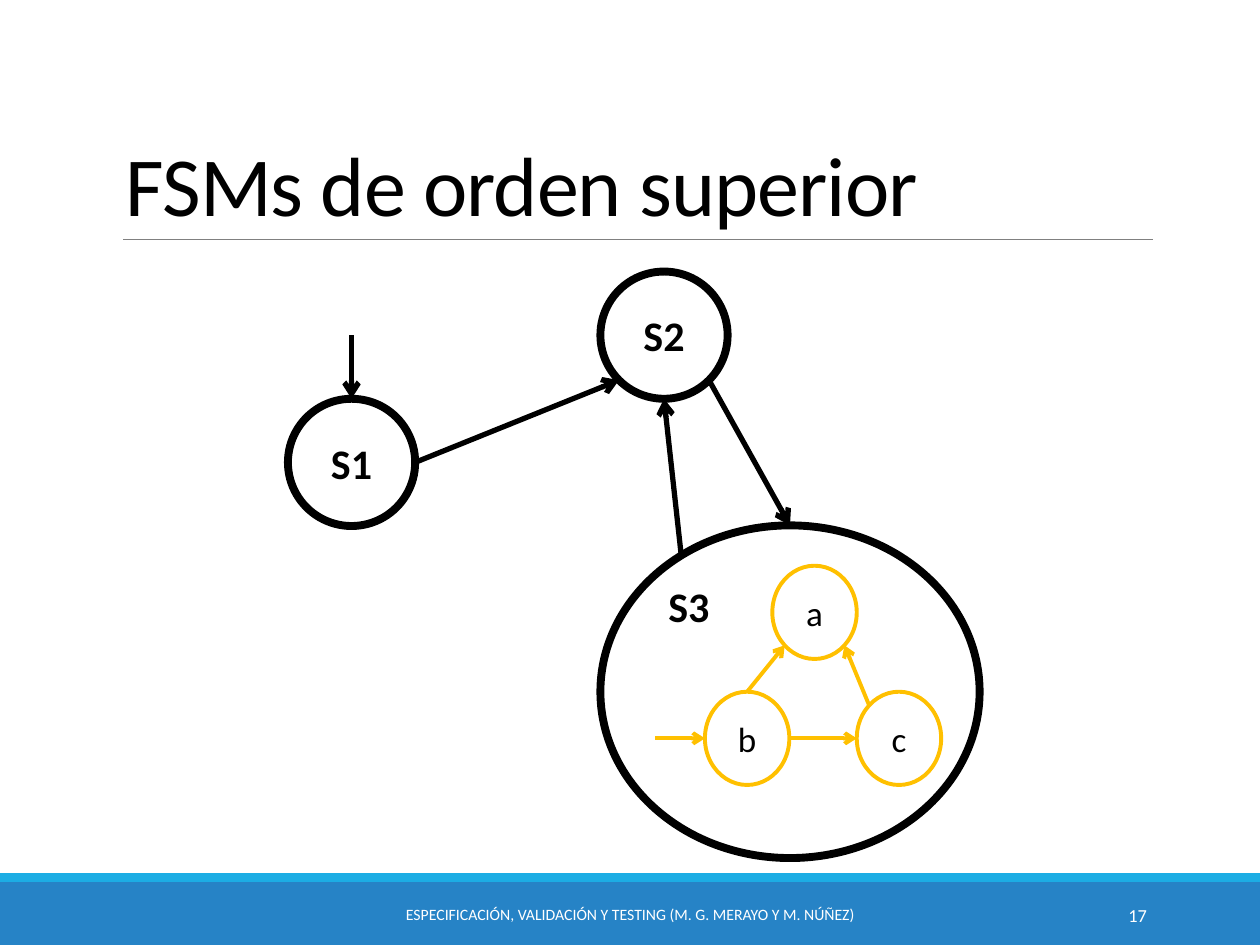
from dataclasses import dataclass
from math import cos, radians, sin

from lxml import etree
from pptx import Presentation
from pptx.dml.color import RGBColor
from pptx.enum.shapes import MSO_CONNECTOR, MSO_SHAPE
from pptx.enum.text import MSO_ANCHOR, PP_ALIGN
from pptx.oxml.ns import qn
from pptx.util import Inches, Pt

BLACK = RGBColor(0x00, 0x00, 0x00)
WHITE = RGBColor(0xFF, 0xFF, 0xFF)
GOLD = RGBColor(0xFF, 0xC0, 0x00)
GREY = RGBColor(0x80, 0x80, 0x80)
BLUE = RGBColor(0x26, 0x83, 0xC6)
CYAN = RGBColor(0x1C, 0xAD, 0xE4)
LEFT, CENTER, RIGHT = PP_ALIGN.LEFT, PP_ALIGN.CENTER, PP_ALIGN.RIGHT
TOP, MIDDLE, BOTTOM = MSO_ANCHOR.TOP, MSO_ANCHOR.MIDDLE, MSO_ANCHOR.BOTTOM
RECT, OVAL = MSO_SHAPE.RECTANGLE, MSO_SHAPE.OVAL
STRAIGHT = MSO_CONNECTOR.STRAIGHT

COLS, ROWS = 100, 75
CELL = Inches(10) // COLS
Point = tuple[float, float]


@dataclass(frozen=True)
class State:
    label: str
    cx: float
    cy: float
    w: float
    h: float
    color: RGBColor = BLACK
    weight: float = 4.5
    size: float = 24
    bold: bool = True
    align: PP_ALIGN = CENTER
    anchor: MSO_ANCHOR = MIDDLE

    def at(self, degrees: float) -> Point:
        a = radians(degrees)
        return self.cx + self.w / 2 * cos(a), self.cy - self.h / 2 * sin(a)


@dataclass(frozen=True)
class Arrow:
    start: Point
    end: Point
    color: RGBColor = BLACK
    weight: float = 3


def grid(*cells: float) -> list[int]:
    return [round(c * CELL) for c in cells]


def write(sp, text: str, *, size: float, color: RGBColor = BLACK, bold: bool = False,
          align: PP_ALIGN = LEFT, anchor: MSO_ANCHOR = MIDDLE,
          leading: float | None = None, tracking: float | None = None) -> None:
    tf = sp.text_frame
    tf.word_wrap = True
    tf.vertical_anchor = anchor
    p = tf.paragraphs[0]
    p.alignment = align
    if leading is not None:
        p.line_spacing = leading
    r = p.add_run()
    r.text = text
    r.font.name = "Calibri"
    r.font.size = Pt(size)
    r.font.bold = bold
    r.font.color.rgb = color
    if tracking is not None:
        r.font._element.set("spc", str(round(tracking * 100)))


def add_band(s, top: float, height: float, color: RGBColor) -> None:
    sp = s.shapes.add_shape(RECT, *grid(0, top, COLS, height))
    sp.shadow.inherit = False
    sp.fill.solid()
    sp.fill.fore_color.rgb = color
    sp.line.fill.background()


def add_state(s, state: State) -> None:
    sp = s.shapes.add_shape(OVAL, *grid(
        state.cx - state.w / 2, state.cy - state.h / 2, state.w, state.h))
    sp.shadow.inherit = False
    sp.fill.solid()
    sp.fill.fore_color.rgb = WHITE
    sp.line.color.rgb = state.color
    sp.line.width = Pt(state.weight)
    write(sp, state.label, size=state.size, bold=state.bold,
          align=state.align, anchor=state.anchor)


def add_line(s, line: Arrow, head: bool = True) -> None:
    c = s.shapes.add_connector(STRAIGHT, *grid(*line.start, *line.end))
    c.line.color.rgb = line.color
    c.line.width = Pt(line.weight)
    if head:
        etree.SubElement(c.line._get_or_add_ln(), qn("a:tailEnd"), type="arrow")
    etree.SubElement(c._element.spPr, qn("a:effectLst"))


def outer(label: str, cx: float, cy: float) -> State:
    return State(label, cx, cy, 10.1, 10.1)


def inner(label: str, cx: float, cy: float) -> State:
    return State(label, cx, cy, 6.7, 7.4, GOLD, 2.25, 20, False)


def inner_arrow(start: Point, end: Point) -> Arrow:
    return Arrow(start, end, GOLD, 2.25)


def main() -> None:
    prs = Presentation()
    prs.slide_width, prs.slide_height = grid(COLS, ROWS)
    s = prs.slides.add_slide(prs.slide_layouts[6])

    add_band(s, 70, 5, BLUE)
    add_band(s, 69.3, 0.7, CYAN)
    add_line(s, Arrow((9.8, 19), (91.5, 19), GREY, 0.5), head=False)

    title = s.shapes.add_textbox(*grid(9, 3.1, 82.5, 15.9))
    write(title, "FSMs de orden superior", size=48, anchor=BOTTOM,
          leading=0.85, tracking=-0.5)
    footer = s.shapes.add_textbox(*grid(30.2, 70.6, 39.6, 4))
    write(footer, "ESPECIFICACIÓN, VALIDACIÓN Y TESTING (M. G. MERAYO Y M. NÚÑEZ)",
          size=9, color=WHITE, align=CENTER)
    number = s.shapes.add_textbox(*grid(81.2, 70.6, 10.8, 4))
    write(number, "17", size=10.5, color=WHITE, align=RIGHT)

    s1 = outer("S1", 27.9, 36.7)
    s2 = outer("S2", 52.7, 26.6)
    s3 = State("S3", 62.7, 54.9, 30.1, 26.4, align=LEFT, anchor=TOP)
    a = inner("a", 64.65, 48.6)
    b = inner("b", 59.3, 58.6)
    c = inner("c", 71.35, 58.6)
    for state in (s1, s3, s2, a, b, c):
        add_state(s, state)

    arrows = [
        Arrow(s1.at(0), s2.at(225)),
        Arrow(s2.at(315), s3.at(90)),
        Arrow(s3.at(125), s2.at(270)),
        inner_arrow(b.at(90), a.at(225)),
        inner_arrow(c.at(135), a.at(315)),
        inner_arrow(b.at(0), c.at(180)),
        inner_arrow((52, b.cy), b.at(180)),
        Arrow((s1.cx, s2.cy), s1.at(90)),
    ]
    for arrow in arrows:
        add_line(s, arrow)

    prs.save("out.pptx")


if __name__ == "__main__":
    main()
